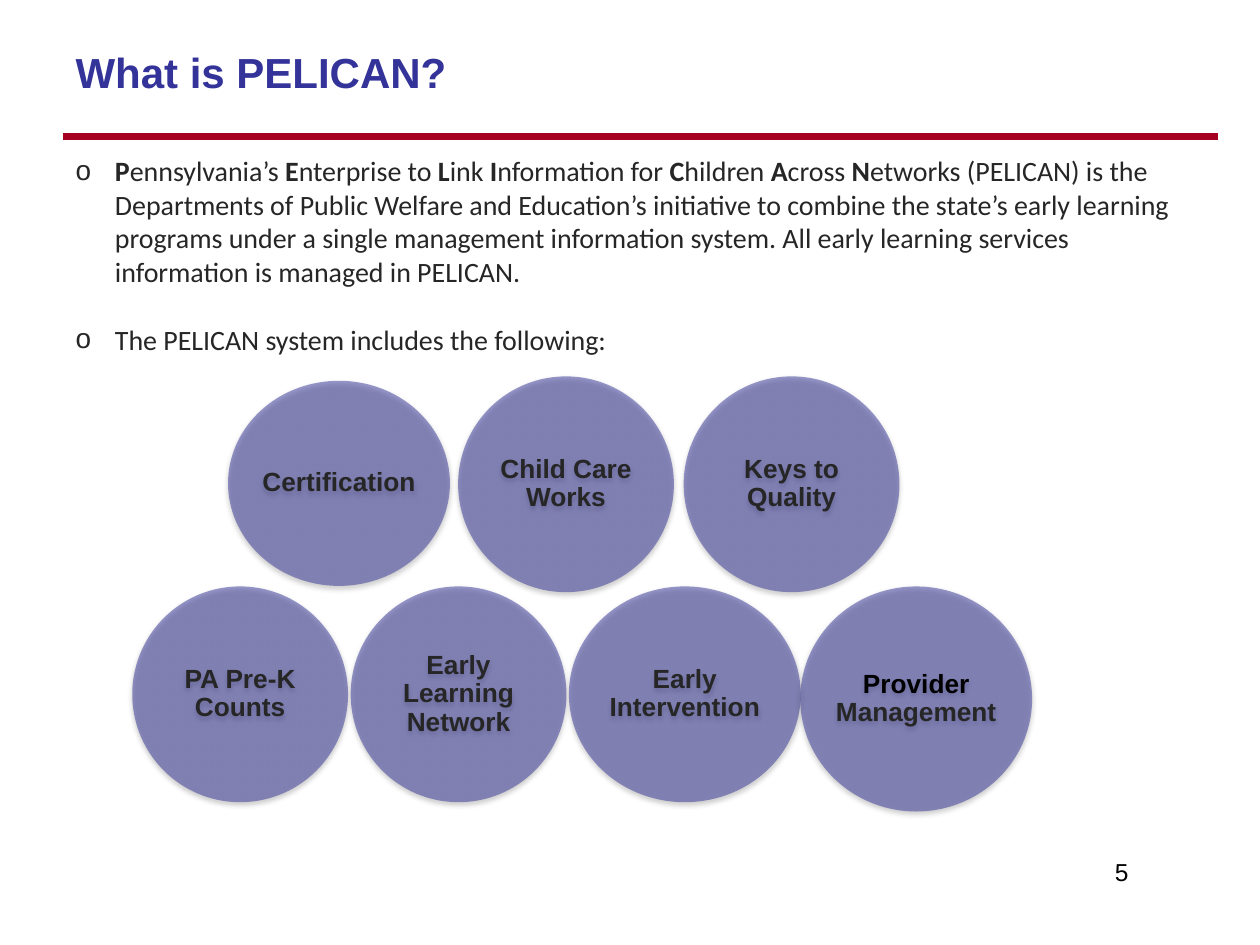
import pptx
import pptx.util
import pptx.dml.color
import pptx.enum.shapes
import pptx.enum.text
import pptx.oxml
from lxml import etree

Pt = pptx.util.Pt
ALIGN = pptx.enum.text.PP_ALIGN
ANCHOR = pptx.enum.text.MSO_ANCHOR
NS = 'xmlns:a="http://schemas.openxmlformats.org/drawingml/2006/main"'

NAVY, RED, DARK, BLACK = "333399", "A50021", "262626", "000000"

TITLE = "What is PELICAN?"
PAGE_NUMBER = "5"
# Text between asterisks is bold.
POINTS = [
    "*P*ennsylvania’s *E*nterprise to *L*ink *I*nformation for *C*hildren *A*cross "
    "*N*etworks (PELICAN) is the Departments of Public Welfare and Education’s "
    "initiative to combine the state’s early learning programs under a single "
    "management information system. All early learning services information is "
    "managed in PELICAN.",
    "The PELICAN system includes the following:",
]
# Each program: runs of (text, colour), then left, top, width, height.
PROGRAMS = [
    ([("Certification", DARK)], (130.3, 217.6, 126.8, 117.2)),
    ([("Child Care Works", DARK)], (261.8, 215.1, 123.3, 123.3)),
    ([("Keys to Quality", DARK)], (390.7, 215.1, 123.3, 123.3)),
    ([("PA Pre-K Counts", DARK)], (75.6, 335.1, 123.3, 123.3)),
    ([("Early Learning Network", DARK)], (200.4, 335.1, 123.3, 123.3)),
    ([("Early Intervention", DARK)], (325.1, 335.1, 132.5, 123.3)),
    ([("Provider ", BLACK), ("Management", DARK)], (457.3, 335.1, 132.5, 128.6)),
]


def rgb(hex_colour):
    return pptx.dml.color.RGBColor.from_string(hex_colour)


def write(paragraph, text, size, font="Arial", color=BLACK, bold=False):
    run = paragraph.add_run()
    run.text = text
    run.font.size = Pt(size)
    run.font.name = font
    run.font.bold = bold
    run.font.color.rgb = rgb(color)


def place(shape, left, top, width, height):
    shape.left, shape.top = Pt(left), Pt(top)
    shape.width, shape.height = Pt(width), Pt(height)


def set_frame(frame, anchor=ANCHOR.TOP):
    frame.word_wrap = True
    frame.auto_size = pptx.enum.text.MSO_AUTO_SIZE.NONE
    frame.vertical_anchor = anchor


def add_bullet(paragraph, indent):
    properties = paragraph._p.get_or_add_pPr()
    properties.set("marL", str(Pt(indent)))
    properties.set("indent", str(-Pt(indent)))
    properties.append(pptx.oxml.parse_xml(f'<a:buChar {NS} char="o"/>'))


def add_title(slide):
    title = slide.shapes.title
    place(title, 36, 15.8, 510, 50.4)
    set_frame(title.text_frame, ANCHOR.MIDDLE)
    heading = title.text_frame.paragraphs[0]
    heading.alignment = ALIGN.LEFT
    write(heading, TITLE, 24, color=NAVY, bold=True)


def add_points(slide):
    body = slide.placeholders[1]
    place(body, 36, 84.3, 653.8, 145.4)
    frame = body.text_frame
    set_frame(frame)
    for index, point in enumerate(POINTS):
        paragraph = frame.add_paragraph() if index else frame.paragraphs[0]
        add_bullet(paragraph, 22.5)
        paragraph.space_before = Pt(19.5 if index else 0)
        for part, text in enumerate(point.split("*")):
            if text:
                write(paragraph, text, 16, font="Calibri", color=DARK, bold=part % 2 == 1)


def add_rule(slide):
    rule = slide.shapes.add_connector(
        pptx.enum.shapes.MSO_CONNECTOR.STRAIGHT, Pt(36), Pt(78), Pt(696), Pt(78))
    rule.line.color.rgb = rgb(RED)
    rule.line.width = Pt(4.5)
    rule._element.spPr.append(pptx.oxml.parse_xml(f"<a:effectLst {NS}/>"))


def add_program(slide, runs, box):
    circle = slide.shapes.add_shape(
        pptx.enum.shapes.MSO_SHAPE.OVAL, *(Pt(length) for length in box))
    circle.fill.solid()
    circle.fill.fore_color.rgb = rgb(NAVY)
    circle.line.fill.background()
    properties = circle._element.spPr
    fill_colour = properties.find(".//{*}solidFill/{*}srgbClr")
    fill_colour.append(pptx.oxml.parse_xml(f'<a:alpha {NS} val="50000"/>'))
    properties.append(pptx.oxml.parse_xml(
        f'<a:effectLst {NS}><a:outerShdw blurRad="{Pt(3.1)}" dist="{Pt(1.6)}" '
        f'dir="5400000" rotWithShape="0"><a:srgbClr val="{BLACK}">'
        '<a:alpha val="38000"/></a:srgbClr></a:outerShdw></a:effectLst>'))

    frame = circle.text_frame
    set_frame(frame, ANCHOR.MIDDLE)
    frame.margin_left = frame.margin_right = Pt(0.9)
    frame.margin_top = frame.margin_bottom = Pt(0.9)
    label = frame.paragraphs[0]
    label.alignment = ALIGN.CENTER
    label.line_spacing = 0.9
    for text, color in runs:
        write(label, text, 15, color=color, bold=True)


def add_page_number(slide):
    number = slide.shapes.add_textbox(Pt(630), Pt(486), Pt(78), Pt(24))
    set_frame(number.text_frame)
    write(number.text_frame.paragraphs[0], PAGE_NUMBER, 14)


def main():
    deck = pptx.Presentation()
    deck.slide_width, deck.slide_height = Pt(720), Pt(540)
    slide = deck.slides.add_slide(deck.slide_layouts[1])
    add_rule(slide)
    add_page_number(slide)
    add_title(slide)
    add_points(slide)
    for runs, box in PROGRAMS:
        add_program(slide, runs, box)
    deck.save("out.pptx")


if __name__ == "__main__":
    main()
